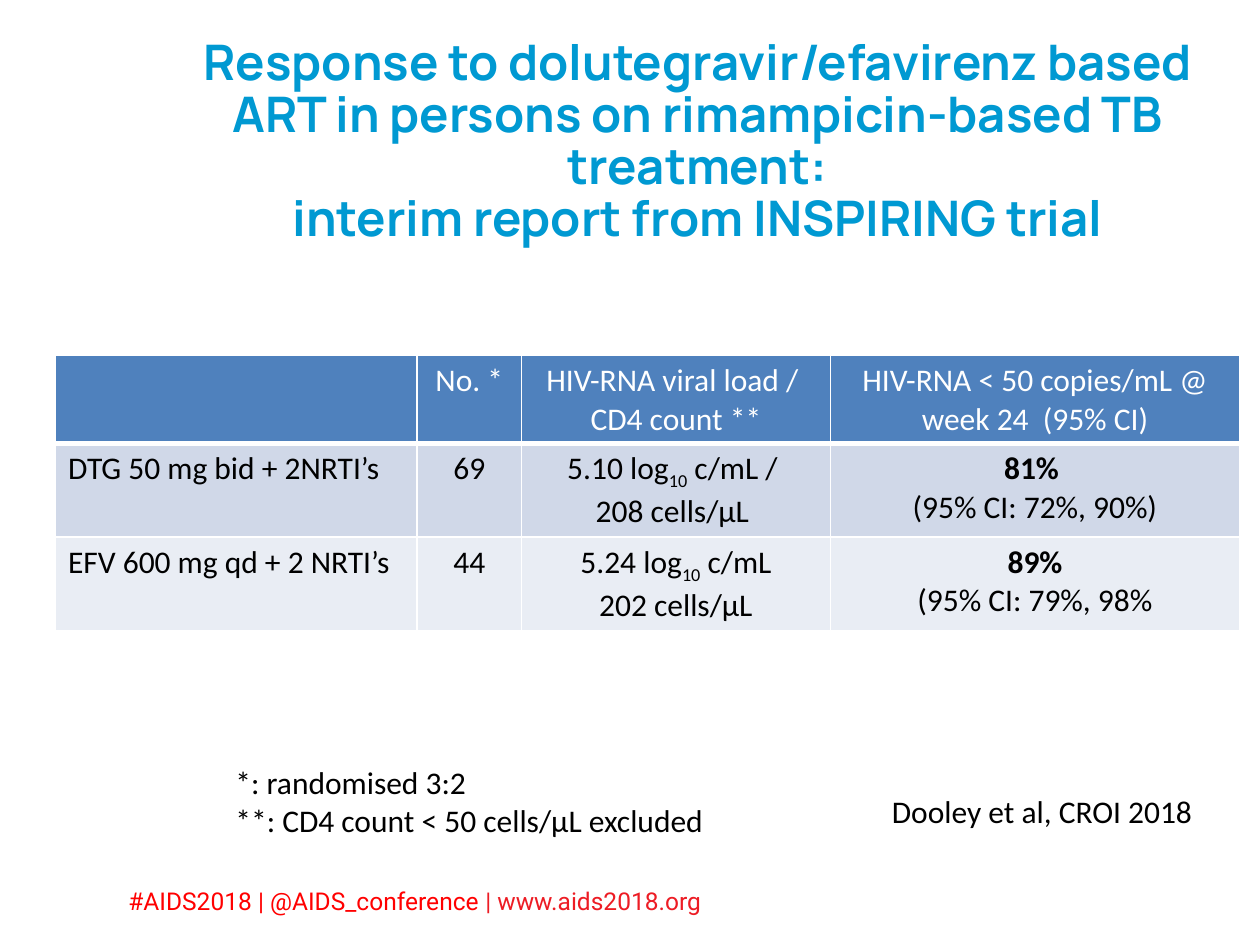
from lxml.etree import SubElement
from pptx import Presentation
from pptx.dml.color import RGBColor
from pptx.enum.text import MSO_ANCHOR, MSO_AUTO_SIZE, PP_ALIGN
from pptx.oxml.ns import qn
from pptx.util import Inches, Pt

COLORS = {
    "title": "0099D2", "header": "4F81BD", "band1": "D0D8E8", "band2": "E9EDF4",
    "white": "FFFFFF", "black": "000000", "hashtag": "FF0000", "site": "ED1C24",
}
COL_WIDTHS = [2.87, 0.83, 2.45, 3.25]
ROW_HEIGHT = 0.7

# Each cell is a list of paragraphs, each paragraph a list of (text, style) runs
ROWS = [
    [[],
     [[("No. *", "")]],
     [[("HIV-RNA viral load / ", "")], [("CD4 count **", "")]],
     [[("HIV-RNA < 50 copies/mL @ week 24  (95% CI)", "")]]],
    [[[("DTG 50 mg bid + 2NRTI’s", "")]],
     [[("69", "")]],
     [[("5.10 log", ""), ("10", "sub"), ("\u00a0c/mL / ", "")], [("208 cells/µL ", "")]],
     [[("81% ", "bold")], [("(95% CI: 72%, 90%)", "")]]],
    [[[("EFV 600 mg qd + 2 NRTI’s", "")]],
     [[("44", "")]],
     [[("5.24 log", ""), ("10", "sub"), ("\u00a0c/mL", "")], [("202 cells/µL", "")]],
     [[("89%", "bold")], [("(95% CI: 79%, 98%", "")]]],
]


def rgb(name):
    return RGBColor.from_string(COLORS[name])


def add_run(p, text, size, font, color, bold=False):
    r = p.add_run()
    r.text = text
    r.font.size = Pt(size)
    r.font.name = font
    r.font.bold = bold
    r.font.color.rgb = rgb(color)
    return r


def add_title(slide, left, top, width, height):
    sp = slide.shapes.title
    sp.left, sp.top, sp.width, sp.height = map(Inches, (left, top, width, height))
    tf = sp.text_frame
    tf.word_wrap = True
    tf.auto_size = MSO_AUTO_SIZE.NONE
    tf.vertical_anchor = MSO_ANCHOR.MIDDLE
    p = tf.paragraphs[0]
    p.alignment = PP_ALIGN.CENTER
    p.line_spacing = 0.88
    add_run(p, "Response to dolutegravir/efavirenz based ART in persons on "
               "rimampicin-based TB treatment:", 28, "Manrope", "title", True)
    p.add_line_break()
    add_run(p, "interim report from INSPIRING trial", 28, "Manrope", "title", True)


def set_borders(cell, bottom):
    tc_pr = cell._tc.get_or_add_tcPr()
    widths = {"a:lnL": 1, "a:lnR": 1, "a:lnT": 1, "a:lnB": bottom}
    for i, (tag, width) in enumerate(widths.items()):
        ln = SubElement(tc_pr, qn(tag), w=str(Pt(width)))
        fill = SubElement(ln, qn("a:solidFill"))
        SubElement(fill, qn("a:srgbClr"), val=COLORS["white"])
        tc_pr.insert(i, ln)  # borders come before the fill


def fill_cell(cell, paragraphs, color, centered):
    tf = cell.text_frame
    for i, runs in enumerate(paragraphs):
        p = tf.add_paragraph() if i else tf.paragraphs[0]
        p.alignment = PP_ALIGN.CENTER if centered else PP_ALIGN.LEFT
        for text, style in runs:
            r = add_run(p, text, 18, "Calibri", color, style == "bold")
            if style == "sub":
                r.font._element.set("baseline", "-25000")


def add_results_table(slide, left, top):
    table = slide.shapes.add_table(
        len(ROWS), len(COL_WIDTHS), Inches(left), Inches(top),
        Inches(sum(COL_WIDTHS)), Inches(ROW_HEIGHT * len(ROWS))).table
    for col, width in zip(table.columns, COL_WIDTHS):
        col.width = Inches(width)
    for i, (row, fill) in enumerate(zip(ROWS, ("header", "band1", "band2"))):
        for j, paragraphs in enumerate(row):
            cell = table.cell(i, j)
            cell.fill.solid()
            cell.fill.fore_color.rgb = rgb(fill)
            set_borders(cell, bottom=1 if i else 3)
            fill_cell(cell, paragraphs, "black" if i else "white", centered=j > 0)


def add_text(slide, left, top, width, height, lines, size, font, wrap=False):
    sp = slide.shapes.add_textbox(*map(Inches, (left, top, width, height)))
    tf = sp.text_frame
    tf.word_wrap = wrap
    tf.auto_size = MSO_AUTO_SIZE.SHAPE_TO_FIT_TEXT
    for i, runs in enumerate(lines):
        p = tf.add_paragraph() if i else tf.paragraphs[0]
        for text, color in runs:
            add_run(p, text, size, font, color)


def main():
    prs = Presentation()
    prs.slide_width, prs.slide_height = Inches(10), Inches(7.5)
    slide = prs.slides.add_slide(prs.slide_layouts[5])

    # Conference footer
    add_text(slide, 0.92, 6.98, 7.35, 0.34,
             [[("#AIDS2018 | @AIDS_conference ", "hashtag"),
               ("|\u00a0www.aids2018.org", "site")]], 14, "Roboto", wrap=True)
    # Title and results
    add_title(slide, 1.23, 0.51, 8.61, 1.25)
    add_results_table(slide, 0.44, 2.82)
    # Footnotes and citation
    add_text(slide, 1.77, 6.01, 3.96, 0.71,
             [[("*: randomised 3:2", "black")],
              [("**: CD4 count < 50 cells/µL excluded", "black")]], 18, "Calibri")
    add_text(slide, 6.98, 6.24, 2.61, 0.4,
             [[("Dooley et al, CROI 2018", "black")]], 18, "Calibri")
    prs.save("out.pptx")


if __name__ == "__main__":
    main()
